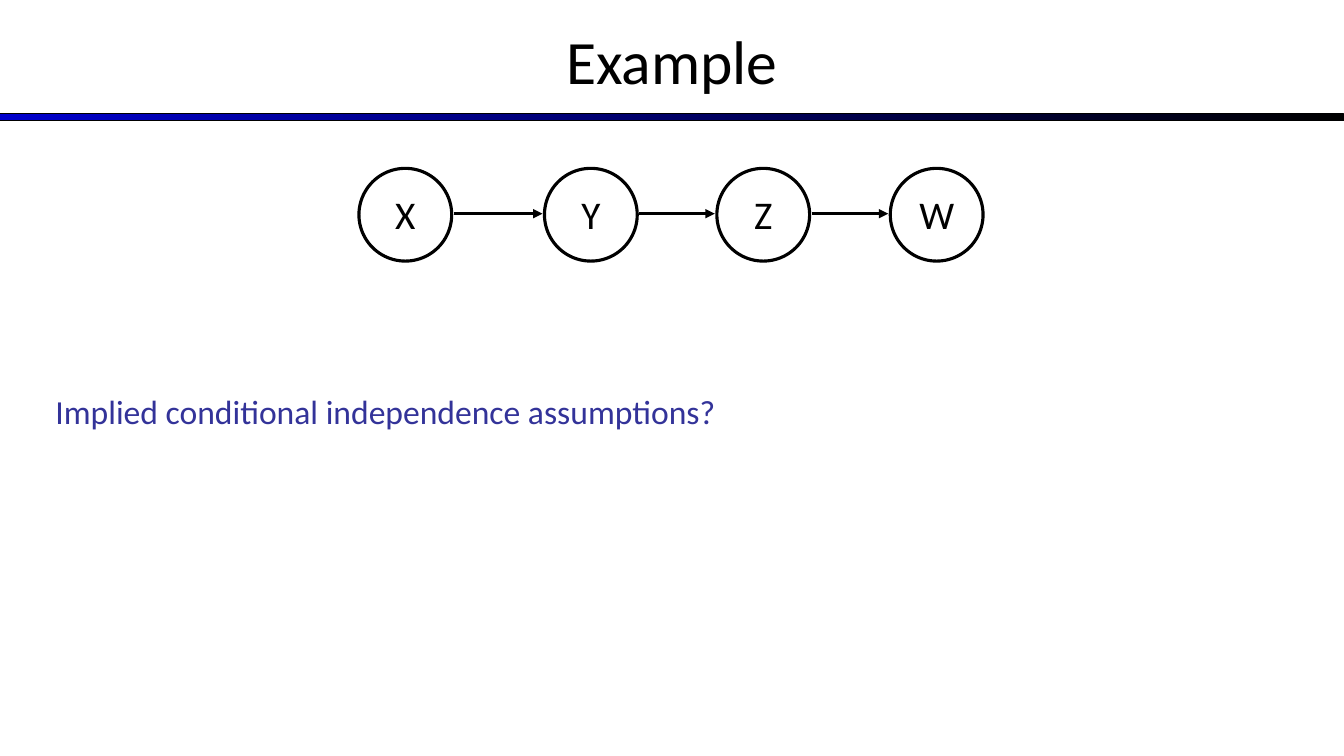
from dataclasses import dataclass

from lxml.etree import SubElement
from pptx import Presentation
from pptx.dml.color import RGBColor
from pptx.enum.shapes import MSO_CONNECTOR, MSO_SHAPE
from pptx.enum.text import MSO_ANCHOR, MSO_AUTO_SIZE, PP_ALIGN
from pptx.oxml.ns import qn
from pptx.util import Inches, Pt


@dataclass(frozen=True)
class Theme:
    font: str = "Calibri"
    black: RGBColor = RGBColor(0x00, 0x00, 0x00)
    white: RGBColor = RGBColor(0xFF, 0xFF, 0xFF)
    blue: RGBColor = RGBColor(0x00, 0x00, 0xCC)
    indigo: RGBColor = RGBColor(0x33, 0x33, 0x99)
    title_size: int = 44
    node_size: int = 28
    body_size: int = 24
    line_width: float = 2.25
    rule_width: float = 0.75


THEME = Theme()
SLIDE_WIDTH = 13.33
NODE_TOP = 1.67
NODE_SIZE = 0.92
ARROW_Y = 2.12
ARROW_GAP = 0.02
LABEL_TOP = 1.84
LABEL_HEIGHT = 0.57
NODES = [("X", 3.56, 0.37), ("Y", 5.4, 0.37), ("Z", 7.11, 0.35), ("W", 8.83, 0.48)]


def write_text(sp, text, *, size, color=THEME.black, align=PP_ALIGN.LEFT,
               anchor=MSO_ANCHOR.TOP, wrap=True, auto_size=MSO_AUTO_SIZE.NONE):
    tf = sp.text_frame
    tf.word_wrap = wrap
    tf.auto_size = auto_size
    tf.vertical_anchor = anchor
    tf.margin_left = tf.margin_right = Inches(0.05)
    tf.margin_top = tf.margin_bottom = Inches(0.05)
    p = tf.paragraphs[0]
    p.alignment = align
    r = p.add_run()
    r.text = text
    r.font.name = THEME.font
    r.font.size = Pt(size)
    r.font.color.rgb = color


def add_box(s, left, top, width, height):
    return s.shapes.add_textbox(Inches(left), Inches(top), Inches(width), Inches(height))


def add_outlined(s, kind, left, top, width, height, line_width):
    sp = s.shapes.add_shape(kind, Inches(left), Inches(top), Inches(width), Inches(height))
    sp.shadow.inherit = False
    sp.line.color.rgb = THEME.black
    sp.line.width = Pt(line_width)
    return sp


def add_title(s, text):
    sp = s.shapes.title
    sp.left, sp.top = Inches(0), Inches(-0.03)
    sp.width, sp.height = Inches(SLIDE_WIDTH), Inches(1.25)
    write_text(sp, text, size=THEME.title_size, align=PP_ALIGN.CENTER,
               anchor=MSO_ANCHOR.MIDDLE)


def add_rule(s):
    sp = add_outlined(s, MSO_SHAPE.RECTANGLE, 0, 1.13, SLIDE_WIDTH, 0.07, THEME.rule_width)
    sp.fill.gradient()
    sp.fill.gradient_angle = 0
    for stop, color in zip(sp.fill.gradient_stops, (THEME.blue, THEME.black)):
        stop.color.rgb = color


def add_node(s, label, left, label_width):
    sp = add_outlined(s, MSO_SHAPE.OVAL, left, NODE_TOP, NODE_SIZE, NODE_SIZE,
                      THEME.line_width)
    sp.fill.solid()
    sp.fill.fore_color.rgb = THEME.white
    label_left = left + (NODE_SIZE - label_width) / 2
    box = add_box(s, label_left, LABEL_TOP, label_width, LABEL_HEIGHT)
    write_text(box, label, size=THEME.node_size, align=PP_ALIGN.CENTER,
               anchor=MSO_ANCHOR.MIDDLE, wrap=False,
               auto_size=MSO_AUTO_SIZE.SHAPE_TO_FIT_TEXT)


def add_arrow(s, start, end):
    line = s.shapes.add_connector(MSO_CONNECTOR.STRAIGHT, Inches(start), Inches(ARROW_Y),
                                  Inches(end), Inches(ARROW_Y))
    line.line.color.rgb = THEME.black
    line.line.width = Pt(THEME.line_width)
    SubElement(line.line._get_or_add_ln(), qn("a:tailEnd"), type="triangle")
    SubElement(line._element.spPr, qn("a:effectLst"))


def add_chain(s):
    for label, left, label_width in NODES:
        add_node(s, label, left, label_width)
    for (_, left, _), (_, next_left, _) in zip(NODES, NODES[1:]):
        add_arrow(s, left + NODE_SIZE + ARROW_GAP, next_left - ARROW_GAP)


def main():
    prs = Presentation()
    prs.slide_width, prs.slide_height = Inches(SLIDE_WIDTH), Inches(7.5)
    s = prs.slides.add_slide(prs.slide_layouts[5])
    add_rule(s)
    add_title(s, "Example")
    question = add_box(s, 0.5, 3.83, 12, 2.75)
    write_text(question, "Implied conditional independence assumptions?",
               size=THEME.body_size, color=THEME.indigo)
    add_chain(s)
    prs.save("out.pptx")


if __name__ == "__main__":
    main()
